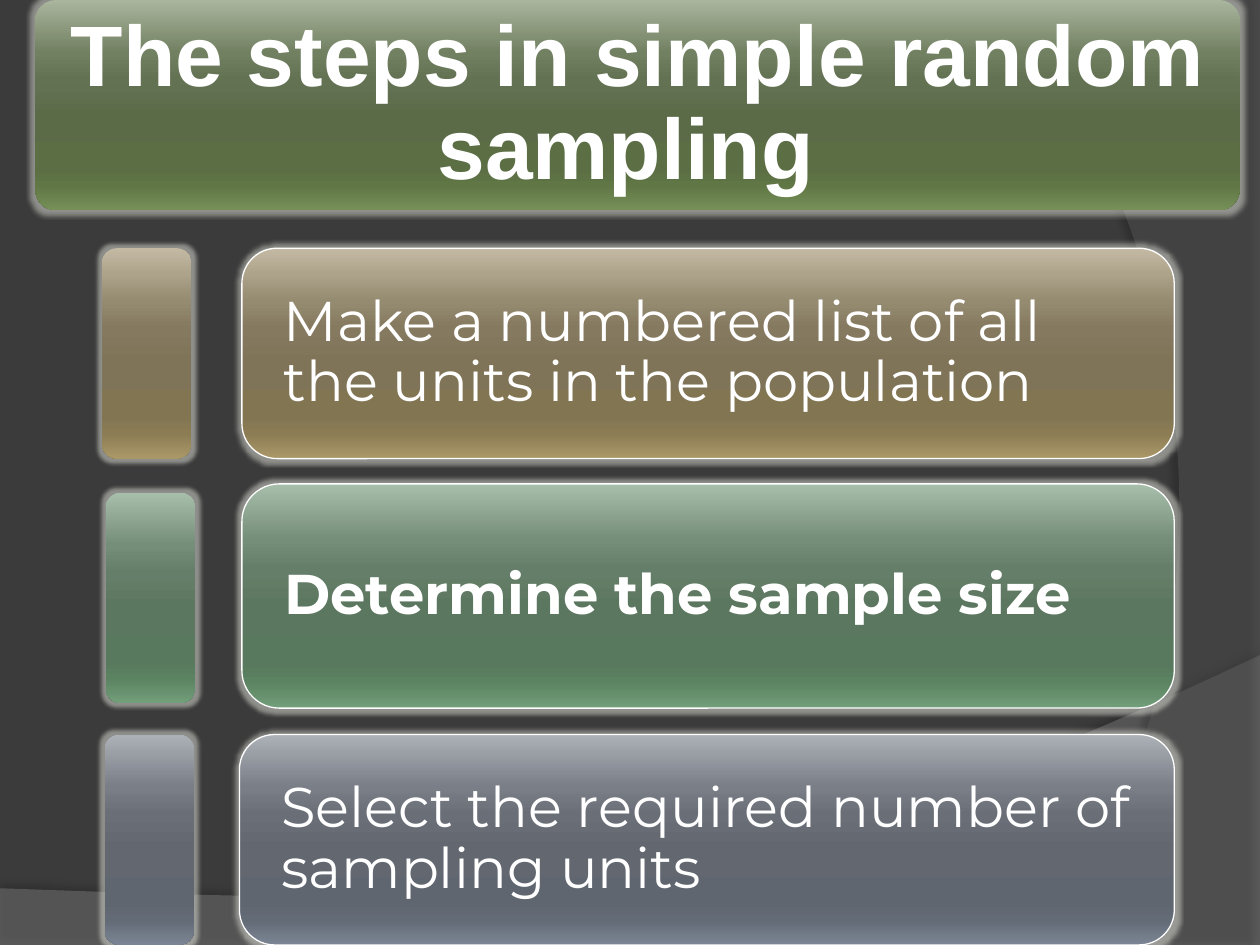
"""Build a slide that lists the steps in simple random sampling."""
from lxml import etree
from pptx import Presentation
from pptx import util as u
from pptx.dml.color import RGBColor
from pptx.enum import shapes, text
from pptx.oxml.ns import qn

COLORS = {
    "background": "3B3B3B", "wave": "7F7F7F", "arc": "5E5E5E",
    "shadow": "000000", "glow": "E4E4DC", "white": "FFFFFF",
}
STOPS = (0, 25, 38, 55, 80, 88, 100)
GRADIENTS = {
    "olive": "A9B59D 728062 647254 5B6B48 5B6E44 607645 769058",
    "sand": "C4BAA3 958B71 857A60 7F7457 827552 8C7C54 AA9868",
    "green": "A7BEAB 758E79 657E69 5C7760 58795E 5B8261 729E79",
    "slate": "ACB0B7 7A7F87 6A6F77 626770 5F6670 636B77 7B8492",
}
COLUMNS, ROWS = 100, 75


def curve(start, control1, control2, end, steps=40):
    """Return points along a cubic Bezier curve, after its start."""
    points = []
    for step in range(1, steps + 1):
        t = step / steps
        weights = ((1 - t) ** 3, 3 * t * (1 - t) ** 2, 3 * t * t * (1 - t), t ** 3)
        points.append(tuple(
            sum(w * p[axis] for w, p in zip(weights, (start, control1, control2, end)))
            for axis in (0, 1)))
    return points


def add_color(parent, color, alpha=100):
    """Append a colour element with its opacity in percent."""
    node = etree.SubElement(parent, qn("a:srgbClr"), val=color)
    if alpha < 100:
        etree.SubElement(node, qn("a:alpha"), val=str(alpha * 1000))


class Deck:
    """Hold the presentation, its style and the current slide."""

    def __init__(self):
        self.presentation = Presentation()
        self.presentation.slide_width = u.Inches(10)
        self.presentation.slide_height = u.Inches(7.5)
        self.column = self.presentation.slide_width / COLUMNS
        self.row = self.presentation.slide_height / ROWS
        self.slide = self.presentation.slides.add_slide(self.presentation.slide_layouts[6])
        fill = self.slide.background.fill
        fill.solid()
        fill.fore_color.rgb = RGBColor.from_string(COLORS["background"])

    def place(self, column, row):
        """Turn a grid position into lengths."""
        return round(column * self.column), round(row * self.row)

    def effect(self, shape, tag, color, alpha, **attributes):
        """Give the shape one glow or shadow."""
        shape.shadow.inherit = False
        effects = shape._element.spPr.find(qn("a:effectLst"))
        node = etree.SubElement(effects, qn(tag), **attributes)
        add_color(node, COLORS[color], alpha)

    def backdrop(self, points, color, opacity, shadow_opacity, distance, direction):
        """Draw a see-through outline with a soft shadow."""
        outline = [self.place(*point) for point in points]
        builder = self.slide.shapes.build_freeform(*outline[0])
        builder.add_line_segments(outline[1:], close=True)
        shape = builder.convert_to_shape()
        shape.fill.solid()
        shape.fill.fore_color.rgb = RGBColor.from_string(COLORS[color])
        fill_color = shape._element.spPr.find(qn("a:solidFill"))[0]
        etree.SubElement(fill_color, qn("a:alpha"), val=str(opacity * 1000))
        shape.line.fill.background()
        self.effect(shape, "a:outerShdw", "shadow", shadow_opacity,
                    blurRad=str(u.Pt(4)), dist=str(u.Pt(distance)),
                    dir=str(direction * 60000), rotWithShape="0")

    def panel(self, column, row, width, height, gradient, corner=0.167, outlined=False):
        """Draw a glowing rounded panel with a vertical gradient."""
        shape = self.slide.shapes.add_shape(
            shapes.MSO_SHAPE.ROUNDED_RECTANGLE,
            *self.place(column, row), *self.place(width, height))
        shape.adjustments[0] = corner
        shape.fill.gradient()
        shape.fill.gradient_angle = 270
        stop_list = shape._element.spPr.find(qn("a:gradFill")).find(qn("a:gsLst"))
        for stop in list(stop_list):
            stop_list.remove(stop)
        for position, color in zip(STOPS, GRADIENTS[gradient].split()):
            add_color(etree.SubElement(stop_list, qn("a:gs"), pos=str(position * 1000)), color)
        if outlined:
            shape.line.color.rgb = RGBColor.from_string(COLORS["white"])
            shape.line.width = u.Pt(0.75)
        else:
            shape.line.fill.background()
        self.effect(shape, "a:glow", "glow", 50, rad=str(u.Pt(5)))
        return shape

    def label(self, shape, words, font, size, align, inset, bold=False):
        """Set the words inside a panel."""
        frame = shape.text_frame
        frame.word_wrap = True
        frame.vertical_anchor = text.MSO_ANCHOR.MIDDLE
        frame.margin_left = frame.margin_right = u.Inches(inset[0])
        frame.margin_top = frame.margin_bottom = u.Inches(inset[1])
        frame.text = words
        paragraph = frame.paragraphs[0]
        paragraph.alignment = align
        paragraph.line_spacing = 0.9
        style = paragraph.runs[0].font
        style.name, style.size, style.bold = font, u.Pt(size), bold
        style.color.rgb = RGBColor.from_string(COLORS["white"])

    def title(self, words):
        """Draw the title banner."""
        banner = self.panel(2.8, 0, 95.6, 16.7, "olive", corner=0.1)
        self.label(banner, words, "Arial", 49, text.PP_ALIGN.CENTER, (0.1, 0.07), bold=True)

    def step(self, words, gradient, marker, card, bold=False):
        """Draw one step as a marker and a card; each is given by its left and top."""
        self.panel(*marker, 7.1, 16.7, gradient)
        left, top, height = card
        box = self.panel(left, top, 93.2 - left, height, gradient, outlined=True)
        self.label(box, words, "Montserrat", 32, text.PP_ALIGN.LEFT, (0.25, 0.25), bold)


def main():
    """Build and save the slide."""
    deck = Deck()
    wave = curve((100, 52), (55.9, 72.9), (39.1, 71.9), (0, 70.5))
    arc = curve((82.1, 75), (93.5, 61.9), (101.8, 30), (80, 0))
    deck.backdrop([(0, 75), (100, 75), (100, 52)] + wave, "wave", 45, 35, 3.5, 270)
    deck.backdrop([(100, 0), (100, 75), (82.1, 75)] + arc, "arc", 40, 45, 4, 180)
    deck.title("The steps in simple random sampling ")
    deck.step("Make a numbered list of all the units in the population",
              "sand", (8.1, 19.7), (19.2, 19.7, 16.7))
    deck.step("Determine the sample size",
              "green", (8.4, 39.1), (19.2, 38.4, 17.8), bold=True)
    deck.step("Select the required number of sampling units",
              "slate", (8.3, 58.3), (19, 58.3, 16.7))
    deck.presentation.save("out.pptx")


if __name__ == "__main__":
    main()
